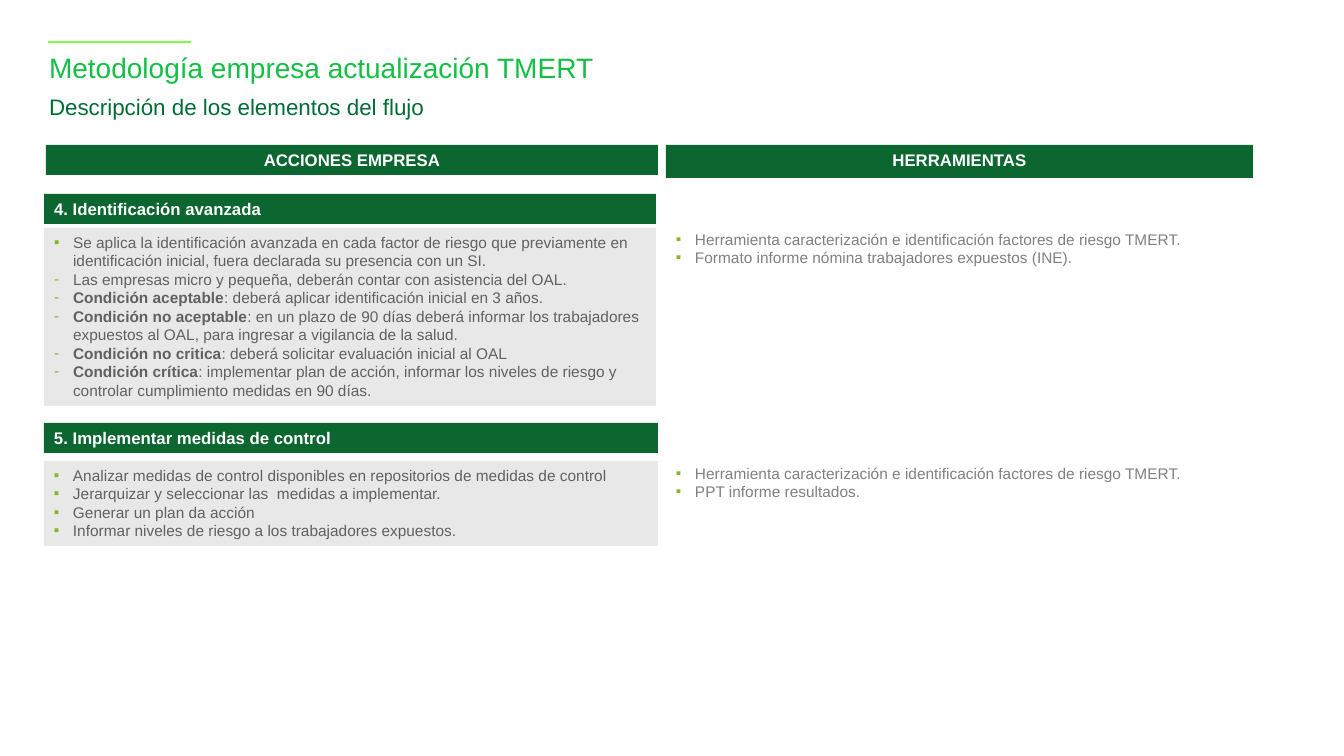
import pptx
import pptx.dml.color
import pptx.enum.shapes
import pptx.enum.text
import pptx.oxml.ns
import pptx.util
from lxml import etree

RGBColor = pptx.dml.color.RGBColor
BRIGHT_GREEN = RGBColor(0x13, 0xC0, 0x45)
DEEP_GREEN = RGBColor(0x00, 0x6D, 0x36)
LIME = RGBColor(0x7E, 0xFF, 0x45)
HEADER_GREEN = RGBColor(0x0C, 0x66, 0x2F)
BULLET_GREEN = RGBColor(0x83, 0xB7, 0x27)
PANEL_GRAY = RGBColor(0xE8, 0xE8, 0xE8)
TEXT_GRAY = RGBColor(0x61, 0x61, 0x61)
TOOL_GRAY = RGBColor(0x80, 0x80, 0x80)
WHITE = RGBColor(0xFF, 0xFF, 0xFF)

LEFT = pptx.enum.text.PP_ALIGN.LEFT
CENTER = pptx.enum.text.PP_ALIGN.CENTER
SQUARE, DASH = "▪", "-"
TOOLS_LEFT, TOOLS_WIDTH = 666, 587


def px(count):
    return pptx.util.Emu(round(count * 914400 / 100.8))


def add_bullet(para, mark):
    properties = para._p.get_or_add_pPr()
    properties.set("marL", str(px(19)))
    properties.set("indent", str(px(-19)))
    qn = pptx.oxml.ns.qn
    color = etree.SubElement(properties, qn("a:buClr"))
    etree.SubElement(color, qn("a:srgbClr"), val=str(BULLET_GREEN))
    etree.SubElement(properties, qn("a:buFont"), typeface="Arial")
    etree.SubElement(properties, qn("a:buChar"), char=mark)


def write_text(box, items, size, color, bold=False, align=LEFT, margins=(10, 5), spacing=None):
    """Fill a box with (mark, lead, text) items; the lead is set in bold."""
    frame = box.text_frame
    frame.word_wrap = True
    frame.vertical_anchor = pptx.enum.text.MSO_ANCHOR.TOP
    frame.margin_left = frame.margin_right = px(margins[0])
    frame.margin_top = frame.margin_bottom = px(margins[1])
    for index, (mark, lead, text) in enumerate(items):
        para = frame.add_paragraph() if index else frame.paragraphs[0]
        para.alignment = align
        if spacing:
            para.line_spacing = spacing
        if mark:
            add_bullet(para, mark)
        for words, strong in ((lead, True), (text, bold)):
            if words:
                span = para.add_run()
                span.text = words
                span.font.name = "Arial"
                span.font.size = pptx.util.Pt(size)
                span.font.bold = strong
                span.font.color.rgb = color


class FlowSlide:
    def __init__(self, deck):
        self.page = deck.slides.add_slide(deck.slide_layouts[6])

    def title(self, top, height, text, size, color):
        box = self.page.shapes.add_textbox(px(49), px(top), px(920), px(height))
        write_text(box, [("", "", text)], size, color, margins=(0, 0), spacing=0.9)

    def accent_line(self, left, right, y):
        line = self.page.shapes.add_connector(
            pptx.enum.shapes.MSO_CONNECTOR.STRAIGHT, px(left), px(y), px(right), px(y))
        line.line.color.rgb = LIME
        line.line.width = pptx.util.Pt(1.75)
        etree.SubElement(line._element.spPr, pptx.oxml.ns.qn("a:effectLst"))

    def panel(self, left, top, width, height, fill):
        box = self.page.shapes.add_shape(
            pptx.enum.shapes.MSO_SHAPE.RECTANGLE, px(left), px(top), px(width), px(height))
        box.shadow.inherit = False
        box.fill.solid()
        box.fill.fore_color.rgb = fill
        box.line.fill.background()
        return box

    def header(self, left, top, width, height, text, align=LEFT):
        box = self.panel(left, top, width, height, HEADER_GREEN)
        write_text(box, [("", "", text)], 12, WHITE, bold=True, align=align)

    def actions(self, top, width, height, items):
        box = self.panel(44, top, width, height, PANEL_GRAY)
        write_text(box, items, 11, TEXT_GRAY)

    def tools(self, top, height, names):
        box = self.panel(TOOLS_LEFT, top, TOOLS_WIDTH, height, WHITE)
        write_text(box, [(SQUARE, "", name) for name in names], 11, TOOL_GRAY)


def main():
    deck = pptx.Presentation()
    deck.slide_width, deck.slide_height = px(1344), px(756)
    slide = FlowSlide(deck)

    slide.title(54, 37, "Metodología empresa actualización TMERT", 20, BRIGHT_GREEN)
    slide.title(96, 39, "Descripción de los elementos del flujo", 16, DEEP_GREEN)
    slide.accent_line(48, 191, 42)
    slide.header(46, 145, 612, 30, "ACCIONES EMPRESA", CENTER)
    slide.header(TOOLS_LEFT, 145, TOOLS_WIDTH, 33, "HERRAMIENTAS", CENTER)

    common_tool = "Herramienta caracterización e identificación factores de riesgo TMERT."

    slide.header(44, 194, 612, 30, "4. Identificación avanzada")
    slide.actions(228, 612, 178, [
        (SQUARE, "", "Se aplica la identificación avanzada en cada factor de riesgo que "
         "previamente en identificación inicial, fuera declarada su presencia con un SI."),
        (DASH, "", "Las empresas micro y pequeña, deberán contar con asistencia del OAL."),
        (DASH, "Condición aceptable", ": deberá aplicar identificación inicial en 3 años."),
        (DASH, "Condición no aceptable", ": en un plazo de 90 días deberá informar los "
         "trabajadores expuestos al OAL, para ingresar a vigilancia de la salud."),
        (DASH, "Condición no critica", ": deberá solicitar evaluación inicial al OAL"),
        (DASH, "Condición crítica", ": implementar plan de acción, informar los niveles "
         "de riesgo y controlar cumplimiento medidas en 90 días."),
    ])
    slide.tools(225, 47, [common_tool, "Formato informe nómina trabajadores expuestos (INE)."])

    slide.header(44, 423, 614, 30, "5. Implementar medidas de control")
    slide.actions(461, 614, 85, [
        (SQUARE, "", "Analizar medidas de control disponibles en repositorios de medidas de control"),
        (SQUARE, "", "Jerarquizar y seleccionar las  medidas a implementar."),
        (SQUARE, "", "Generar un plan da acción"),
        (SQUARE, "", "Informar niveles de riesgo a los trabajadores expuestos."),
    ])
    slide.tools(459, 85, [common_tool, "PPT informe resultados."])

    deck.save("out.pptx")


if __name__ == "__main__":
    main()
